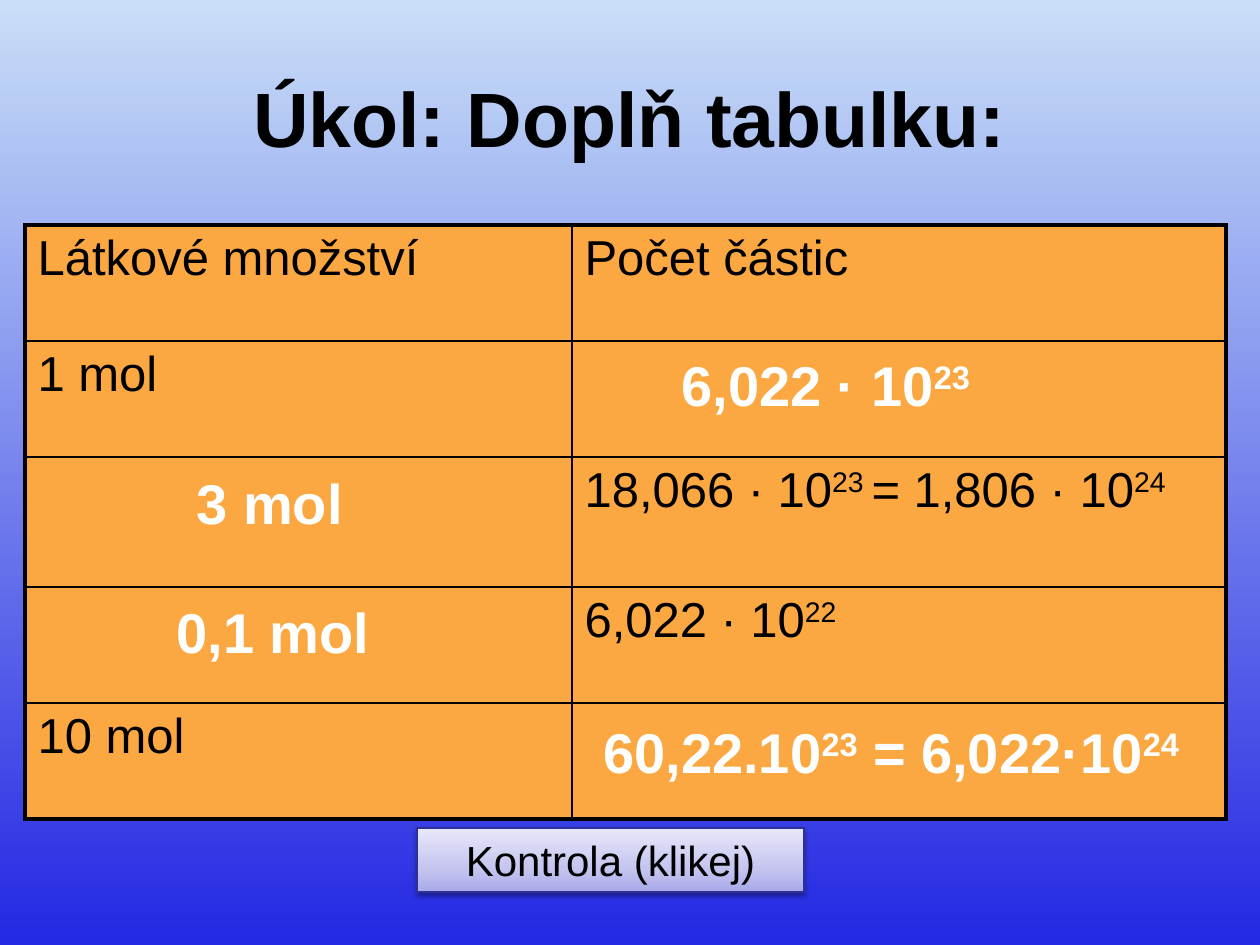
from copy import deepcopy

from lxml.etree import SubElement
from pptx import Presentation
from pptx.dml.color import RGBColor
from pptx.enum.shapes import MSO_SHAPE
from pptx.enum.text import MSO_ANCHOR, PP_ALIGN
from pptx.oxml import parse_xml
from pptx.oxml.ns import nsdecls, qn
from pptx.util import Emu, Pt

PX = 914400 // 126
FONT, BLACK, WHITE, ORANGE = "Arial", "000000", "FFFFFF", "FCA842"

# Text between two ^ marks is superscript.
TITLE = "Úkol: Doplň tabulku:"
TABLE_ROWS = [
    ("Látkové množství", "Počet částic"),
    ("1 mol", ""),
    ("", "18,066 · 10^23 ^= 1,806 · 10^24"),
    ("", "6,022 · 10^22"),
    ("10 mol", ""),
]
COLUMN_WIDTHS = [547, 654]
ROW_HEIGHTS = [116, 116, 130, 116, 116]
TABLE_PLACE = (25, 225, sum(COLUMN_WIDTHS), sum(ROW_HEIGHTS))
ANSWERS = [
    ("6,022 · 10^23", (669, 344, 348, 149)),
    ("3 mol", (184, 462, 297, 118)),
    ("0,1 mol", (164, 591, 307, 81)),
    ("60,22.10^23^ = 6,022·10^24", (591, 711, 645, 81)),
]
BUTTON = ("Kontrola (klikej)", (417, 828, 387, 64))
BACKGROUND_STOPS = [(0, "C9DFF7"), (1, "2328E3")]
BUTTON_STOPS = [(0, "A9A9E9"), (0.35, "C4C4EF"), (1, "E8E8FA")]


def color(value):
    return RGBColor.from_string(value)


def place(box):
    return [Emu(length * PX) for length in box]


def write(frame, text, size, ink=BLACK, bold=False, align=PP_ALIGN.LEFT):
    paragraph = frame.paragraphs[0]
    paragraph.alignment = align
    for index, part in enumerate(text.split("^")):
        run = paragraph.add_run()
        run.text = part
        for name, value in {"name": FONT, "size": Pt(size), "bold": bold}.items():
            setattr(run.font, name, value)
        run.font.color.rgb = color(ink)
        if index % 2:
            run.font._element.set("baseline", "30000")


def fill_gradient(fill, stops, angle):
    """The angle runs counter-clockwise from left to right."""
    fill.gradient()
    fill.gradient_angle = angle
    first = fill.gradient_stops[0]._gs
    for _ in stops[2:]:
        first.addnext(deepcopy(first))
    for stop, (position, value) in zip(fill.gradient_stops, stops):
        stop.position = position
        stop.color.rgb = color(value)


def add_borders(cell, widths):
    properties = cell._tc.get_or_add_tcPr()
    for index, (side, width) in enumerate(widths.items()):
        line = parse_xml(
            f'<a:{side} {nsdecls("a")} w="{Pt(width)}"><a:solidFill>'
            f'<a:srgbClr val="{BLACK}"/></a:solidFill></a:{side}>'
        )
        properties.insert(index, line)


def add_task_table(slide):
    last_row, last_column = len(TABLE_ROWS) - 1, len(COLUMN_WIDTHS) - 1
    table = slide.shapes.add_table(
        len(TABLE_ROWS), len(COLUMN_WIDTHS), *place(TABLE_PLACE)
    ).table
    table.first_row = table.horz_banding = False
    for column, width in zip(table.columns, COLUMN_WIDTHS):
        column.width = Emu(width * PX)
    for r, (row, height, texts) in enumerate(zip(table.rows, ROW_HEIGHTS, TABLE_ROWS)):
        row.height = Emu(height * PX)
        for c, (cell, text) in enumerate(zip(row.cells, texts)):
            cell.fill.solid()
            cell.fill.fore_color.rgb = color(ORANGE)
            outer = {"lnL": c == 0, "lnR": c == last_column,
                     "lnT": r == 0, "lnB": r == last_row}
            add_borders(cell, {side: 2.25 if edge else 1 for side, edge in outer.items()})
            if text:
                write(cell.text_frame, text, 28)


def add_button(slide):
    text, box = BUTTON
    button = slide.shapes.add_shape(MSO_SHAPE.RECTANGLE, *place(box))
    fill_gradient(button.fill, BUTTON_STOPS, 90)
    button.line.color.rgb = color("2F2F98")
    button.line.width = Pt(0.75)
    button.shadow.inherit = False
    effects = button._element.spPr.find(qn("a:effectLst"))
    shadow = SubElement(effects, qn("a:outerShdw"), blurRad=str(Pt(3.1)),
                        dist=str(Pt(1.6)), dir="5400000", rotWithShape="0")
    shade = SubElement(shadow, qn("a:srgbClr"), val=BLACK)
    SubElement(shade, qn("a:alpha"), val="38000")
    button.text_frame.vertical_anchor = MSO_ANCHOR.MIDDLE
    write(button.text_frame, text, 24, align=PP_ALIGN.CENTER)


def main():
    presentation = Presentation()
    presentation.slide_width, presentation.slide_height = place((1260, 945))
    slide = presentation.slides.add_slide(presentation.slide_layouts[5])
    fill_gradient(slide.background.fill, BACKGROUND_STOPS, 270)

    title = slide.shapes.title
    title.left, title.top, title.width, title.height = place((63, 38, 1134, 157))
    title.text_frame.vertical_anchor = MSO_ANCHOR.MIDDLE
    write(title.text_frame, TITLE, 44, bold=True, align=PP_ALIGN.CENTER)

    add_task_table(slide)
    add_button(slide)
    for text, box in ANSWERS:
        frame = slide.shapes.add_textbox(*place(box)).text_frame
        frame.word_wrap = True
        write(frame, text, 32, WHITE, bold=True)
    presentation.save("out.pptx")


if __name__ == "__main__":
    main()
